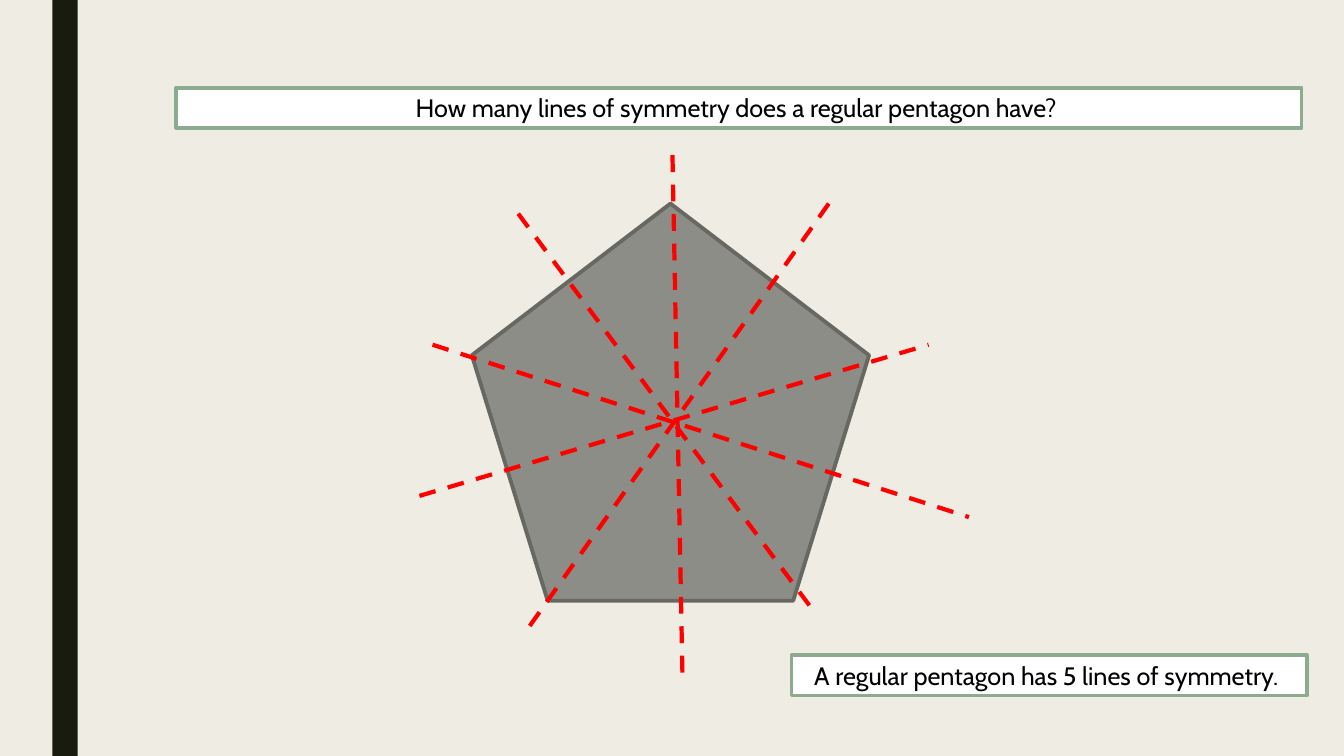
from lxml import etree
from pptx import Presentation
from pptx.dml.color import RGBColor
from pptx.enum.dml import MSO_LINE
from pptx.enum.shapes import MSO_CONNECTOR, MSO_SHAPE
from pptx.enum.text import MSO_ANCHOR, MSO_AUTO_SIZE, PP_ALIGN
from pptx.oxml.ns import qn
from pptx.util import Inches, Pt

RECTANGLE = MSO_SHAPE.RECTANGLE
PENTAGON = MSO_SHAPE.REGULAR_PENTAGON
STRAIGHT = MSO_CONNECTOR.STRAIGHT
DASH = MSO_LINE.DASH

COLORS = {
    "background": "EFEDE3",
    "side_bar": "191B0E",
    "pentagon": "8C8D86",
    "pentagon_edge": "686863",
    "box": "FFFFFF",
    "box_edge": "8DAB8E",
    "symmetry": "FF0000",
    "text": "000000",
}
FONT = {"name": "Cabin", "size": Pt(18)}
FRAME = {
    "word_wrap": True,
    "auto_size": MSO_AUTO_SIZE.SHAPE_TO_FIT_TEXT,
    "vertical_anchor": MSO_ANCHOR.TOP,
}
EDGE_WIDTH = 2.75

# Ends of each symmetry line, measured from the pentagon's top left corner
SYMMETRY_LINES = [
    ((1.99, -0.48), (2.09, 4.73)),
    ((3.54, 0), (0.56, 4.21)),
    ((-0.39, 1.4), (4.93, 3.11)),
    ((0.46, 0.1), (3.41, 4.07)),
    ((-0.52, 2.9), (4.53, 1.4)),
]


def color(name):
    return RGBColor.from_string(COLORS[name])


def set_values(target, values):
    for name, value in values.items():
        setattr(target, name, value)


def add_block(slide, kind, box, fill, edge=None):
    shape = slide.shapes.add_shape(kind, *(Inches(length) for length in box))
    shape.shadow.inherit = False
    shape.fill.solid()
    shape.fill.fore_color.rgb = color(fill)
    if edge:
        shape.line.color.rgb = color(edge)
        shape.line.width = Pt(EDGE_WIDTH)
    else:
        shape.line.fill.background()
    return shape


def add_text_box(slide, box, text):
    shape = add_block(slide, RECTANGLE, box, "box", "box_edge")
    set_values(shape.text_frame, FRAME)
    paragraph = shape.text_frame.paragraphs[0]
    paragraph.alignment = PP_ALIGN.CENTER
    run = paragraph.add_run()
    run.text = text
    set_values(run.font, FONT)
    run.font.color.rgb = color("text")


def add_symmetry_line(slide, start, end):
    ends = (Inches(length) for length in (*start, *end))
    connector = slide.shapes.add_connector(STRAIGHT, *ends)
    connector.line.color.rgb = color("symmetry")
    set_values(connector.line, {"width": Pt(3), "dash_style": DASH})
    etree.SubElement(connector._element.spPr, qn("a:effectLst"))


def add_pentagon_diagram(slide, box):
    left, top = box[:2]
    add_block(slide, PENTAGON, box, "pentagon", "pentagon_edge")
    for ends in SYMMETRY_LINES:
        start, end = ((left + x, top + y) for x, y in ends)
        add_symmetry_line(slide, start, end)


def main():
    presentation = Presentation()
    presentation.slide_width = Inches(13.33)
    presentation.slide_height = Inches(7.5)
    slide = presentation.slides.add_slide(presentation.slide_layouts[6])

    # Background and side bar
    slide.background.fill.solid()
    slide.background.fill.fore_color.rgb = color("background")
    add_block(slide, RECTANGLE, (0.52, 0, 0.25, 7.5), "side_bar")

    # Question, diagram and answer
    add_text_box(slide, (1.75, 0.87, 11.16, 0.4),
                 "How many lines of symmetry does a regular pentagon have? ")
    add_pentagon_diagram(slide, (4.68, 2.02, 3.94, 3.94))
    add_text_box(slide, (7.85, 6.5, 5.11, 0.4),
                 "A regular pentagon has 5 lines of symmetry. ")

    presentation.save("out.pptx")


if __name__ == "__main__":
    main()
